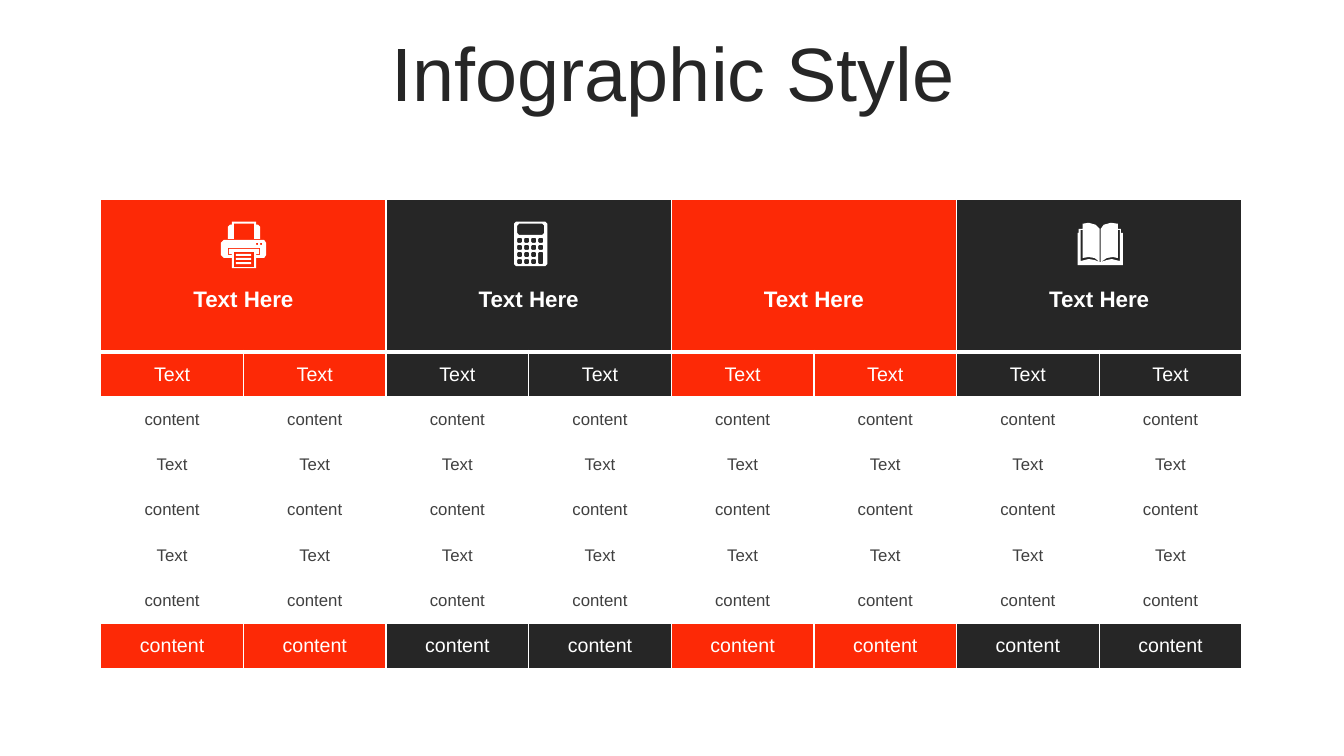
from pptx import Presentation
from pptx.dml.color import RGBColor
from pptx.enum.text import MSO_ANCHOR, MSO_AUTO_SIZE, PP_ALIGN
from pptx.oxml import parse_xml
from pptx.oxml.ns import nsdecls
from pptx.util import Pt

RED, DARK, GRAY, WHITE = "FD2906", "262626", "404040", "FFFFFF"
COLS, COL, HEAD, ROW = 8, 101.88, 108.7, 32.3
UNIT = 0.72


def color(code):
    """Turn a hex string into a colour."""
    return RGBColor.from_string(code)


def write(frame, text, size=12, ink=WHITE, bold=False, space=None):
    """Put one centred line of text into a text frame."""
    line = frame.paragraphs[0]
    line.alignment = PP_ALIGN.CENTER
    line.space_before = Pt(0)
    if space:
        line.line_spacing = space
    run = line.add_run()
    run.text = text
    font = run.font
    font.name, font.size, font.bold = "Arial", Pt(size), bold
    font.color.rgb = color(ink)


def title(slide, box, text):
    """Move the title placeholder to its box and fill it."""
    shape = slide.shapes.title
    shape.left, shape.top, shape.width, shape.height = map(Pt, box)
    frame = shape.text_frame
    frame.word_wrap = True
    frame.auto_size = MSO_AUTO_SIZE.NONE
    frame.vertical_anchor = MSO_ANCHOR.MIDDLE
    write(frame, text, size=54, ink=DARK, space=0.9)


def border(cell, base):
    """Draw white lines round a cell, the lower one of the given width."""
    props = cell._tc.get_or_add_tcPr()
    for spot, (side, width) in enumerate(zip("LRTB", (1, 1, 1, base))):
        props.insert(spot, parse_xml(
            f'<a:ln{side} {nsdecls("a")} w="{Pt(width)}"><a:solidFill>'
            f'<a:srgbClr val="{WHITE}"/></a:solidFill></a:ln{side}>'))


def paint(cell, fill, base=1):
    """Fill, border and anchor one cell."""
    cell.fill.solid()
    cell.fill.fore_color.rgb = color(fill)
    cell.vertical_anchor = MSO_ANCHOR.MIDDLE
    border(cell, base)


def grid(slide, box, rows):
    """Build the table with paired header cells over the text rows."""
    table = slide.shapes.add_table(len(rows) + 1, COLS, *map(Pt, box)).table
    table.first_row = table.horz_banding = False
    for col in table.columns:
        col.width = Pt(COL)
    for index, row in enumerate(table.rows):
        row.height = Pt(ROW if index else HEAD)
    for c in range(COLS):
        tone = DARK if c // 2 % 2 else RED
        head = table.cell(0, c)
        paint(head, tone, base=3)
        if c % 2 == 0:
            head.merge(table.cell(0, c + 1))
            head.margin_top = Pt(38)
            write(head.text_frame, "Text Here", size=16, bold=True)
        for r, (text, strong) in enumerate(rows, 1):
            cell = table.cell(r, c)
            paint(cell, tone if strong else WHITE)
            write(cell.text_frame, text, size=14 if strong else 12,
                  ink=WHITE if strong else GRAY)


def block(x, y, w, h, cut=0):
    """Give the outline of a rectangle with cut corners."""
    r, b = x + w, y + h
    if not cut:
        return [(x, y), (r, y), (r, b), (x, b)]
    return [(x + cut, y), (r - cut, y), (r, y + cut), (r, b - cut),
            (r - cut, b), (x + cut, b), (x, b - cut), (x, y + cut)]


def printer():
    """Give the outlines of the printer icon."""
    body = [(3, 18), (43, 18), (45, 21), (45, 33), (43, 36), (35, 36),
            (35, 46), (11, 46), (11, 36), (3, 36), (0, 33), (0, 21)]
    feed = [(11, 0), (35, 0), (35, 3), (37, 3), (39, 5), (39, 17), (33, 17),
            (33, 2), (13, 2), (13, 17), (7, 17), (7, 5), (9, 3), (11, 3)]
    slot = [(7, 26), (7, 33), (11, 33), (11, 32), (8, 32), (8, 27), (38, 27),
            (38, 32), (35, 32), (35, 33), (39, 33), (39, 26)]
    lines = [block(15, y, 15, 2) for y in (32, 36, 40)]
    dots = [block(x, 21, 2, 2) for x in (35, 39)]
    return [body, feed, slot, block(13, 30, 20, 15), *lines, *dots]


def counter():
    """Give the outlines of the calculator icon."""
    keys = [block(3 + 7 * c, 16 + 7 * r, 5, 12 if (c, r) == (3, 2) else 5, 1)
            for c in range(4) for r in range(4) if (c, r) != (3, 3)]
    return [block(0, 0, 33, 44, 2), block(3, 2, 27, 11, 2), *keys]


def book():
    """Give the outline of the open book icon."""
    return [[(22, 39), (23, 39), (29, 37), (34, 36), (42, 38), (42, 7),
             (40, 7), (40, 35), (35, 34), (29, 35), (23, 39), (23, 6),
             (26, 2), (33, 0), (40, 1), (40, 6), (43, 6), (43, 10), (45, 10),
             (45, 42), (0, 42), (0, 10), (1, 10), (1, 6), (5, 6), (5, 1),
             (11, 0), (18, 2), (22, 6), (22, 39), (17, 35), (11, 34),
             (5, 35), (5, 7), (3, 7), (3, 38), (11, 36), (17, 37)]]


def icon(slide, x, y, paths):
    """Draw one white icon with its top left corner at x, y."""
    pen = slide.shapes.build_freeform(*paths[0][0], scale=Pt(UNIT))
    for index, path in enumerate(paths):
        if index:
            pen.move_to(*path[0])
        pen.add_line_segments(path[1:], close=True)
    shape = pen.convert_to_shape(Pt(x), Pt(y))
    shape.shadow.inherit = False
    shape.fill.solid()
    shape.fill.fore_color.rgb = color(WHITE)
    shape.line.fill.background()


def icons(slide, box):
    """Place the icons in the header cells of the table box."""
    left, top = box[:2]
    for pair, shift, drop, paths in ((0, 85.68, 15.84, printer()),
                                     (1, 91.44, 15.84, counter()),
                                     (3, 86.4, 16.56, book())):
        icon(slide, left + 2 * COL * pair + shift, top + drop, paths)


def main():
    """Build the slide and save it."""
    deck = Presentation()
    deck.slide_width, deck.slide_height = Pt(960), Pt(540)
    slide = deck.slides.add_slide(deck.slide_layouts[5])
    title(slide, (25.2, 26.64, 911.52, 56.88), "Infographic Style")
    box = (72, 142.56, COLS * COL, HEAD + 7 * ROW)
    plain = [("Text" if r % 2 else "content", False) for r in range(5)]
    grid(slide, box, [("Text", True), *plain, ("content", True)])
    icons(slide, box)
    deck.save("out.pptx")


if __name__ == "__main__":
    main()
